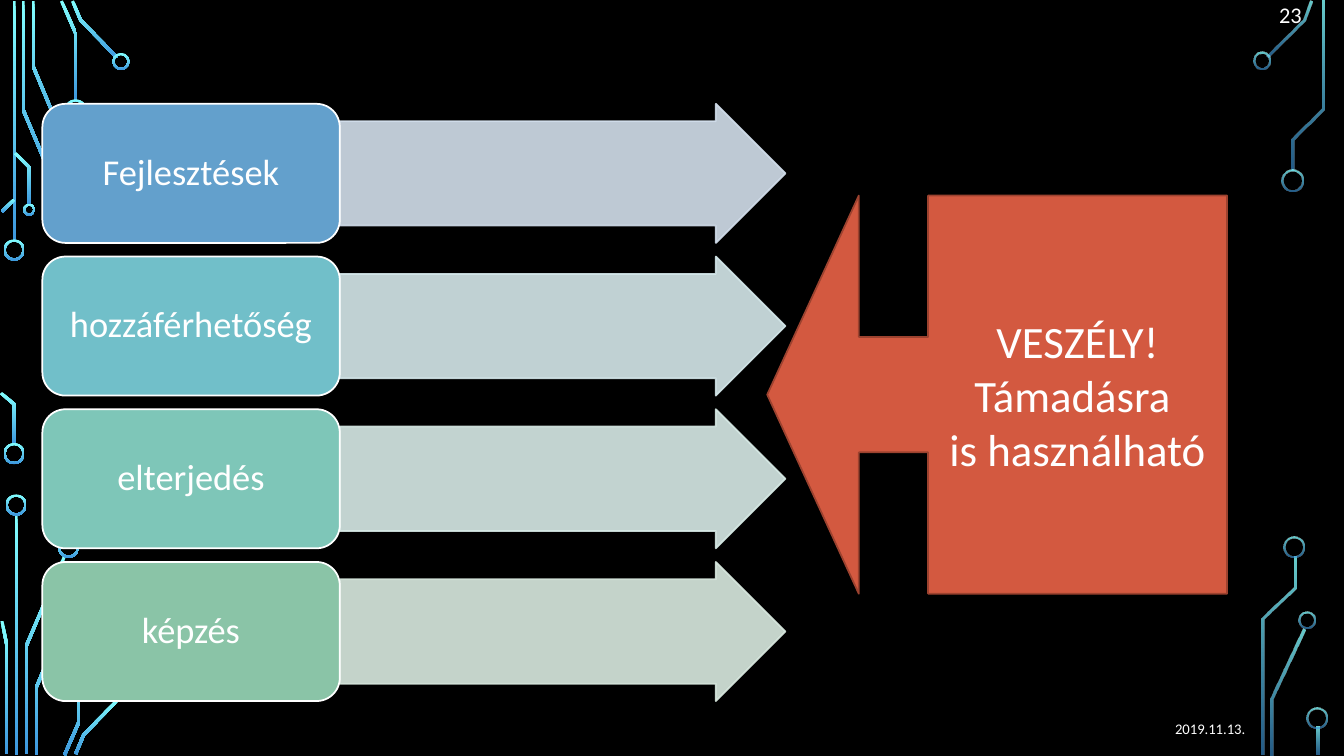
from dataclasses import dataclass
from math import hypot

from lxml.etree import SubElement
from pptx import Presentation
from pptx.dml.color import RGBColor
from pptx.enum.shapes import MSO_SHAPE
from pptx.enum.text import MSO_ANCHOR, PP_ALIGN
from pptx.oxml.ns import qn
from pptx.util import Inches, Pt

Point = tuple[float, float]


@dataclass(frozen=True)
class Theme:
    font: str = "Calibri"
    back: str = "000000"
    white: str = "FFFFFF"
    glow: str = "82FFFF"
    deep: str = "3D97DE"
    alarm: str = "D35940"
    rim: str = "9C422F"
    date: float = 10.5
    number: float = 16
    label: float = 26
    warning: float = 32
    edge: float = 1.25


@dataclass(frozen=True)
class Box:
    left: float
    top: float
    width: float
    height: float

    def emu(self) -> list[int]:
        return [Inches(v) for v in (self.left, self.top, self.width, self.height)]


@dataclass(frozen=True)
class Factor:
    text: str
    fill: str
    arrow: str


@dataclass(frozen=True)
class Ring:
    x: float
    y: float
    size: float = 0.21


@dataclass(frozen=True)
class Circuit:
    traces: list[list[Point]]
    rings: list[Ring]
    alphas: tuple[int, int]


THEME = Theme()
TRACE = 0.03
FACTORS = [
    Factor("Fejlesztések", "63A0CC", "D3DFEC"),
    Factor("hozzáférhetőség", "71BFC9", "D5E8EB"),
    Factor("elterjedés", "7EC6B8", "D8EBE7"),
    Factor("képzés", "8AC4A7", "DAEAE1"),
]
CIRCUITS = [
    Circuit(
        [
            [(0.14, 0.01), (0.14, 2.4)],
            [(0.23, 0.01), (0.23, 1.09), (0.61, 1.99)],
            [(0.33, 0.01), (0.33, 0.66), (0.71, 1.57)],
            [(0.61, 0.01), (0.75, 0.33), (0.75, 1)],
            [(0.72, 0.01), (0.8, 0.2), (1.16, 0.57)],
            [(0.02, 2.1), (0.14, 1.98)],
            [(0.01, 3.9), (0.14, 4.01), (0.14, 4.41)],
            [(0.15, 1.52), (0.29, 1.66), (0.29, 2.03)],
            [(0.16, 5.1), (0.16, 7.49)],
            [(0.26, 7.48), (0.26, 6.41), (0.64, 5.52)],
            [(0.07, 7.48), (0.07, 6.41), (0.02, 6.16)],
            [(0.36, 7.49), (0.36, 6.82), (0.73, 5.94)],
            [(0.64, 7.49), (0.78, 7.17), (0.78, 6.5)],
            [(0.75, 7.48), (0.83, 7.29), (1.18, 6.93)],
        ],
        [
            Ring(0.14, 2.48), Ring(0.14, 4.5), Ring(0.75, 1.09),
            Ring(1.2, 0.61, 0.17), Ring(0.29, 2.08, 0.12), Ring(0.16, 5.01),
            Ring(0.68, 5.43), Ring(1.23, 6.88, 0.17),
        ],
        (100, 100),
    ),
    Circuit(
        [
            [(12.57, 0.56), (12.93, 0.2), (13, 0.01)],
            [(12.62, 7.49), (12.62, 6.93), (12.93, 6.24)],
            [(12.82, 1.69), (12.82, 1.38), (13.12, 1.08), (13.12, 0.01)],
            [(12.53, 7.49), (12.53, 6.14), (12.84, 5.83), (12.84, 5.52)],
            [(13.07, 7.21), (13.07, 7.49)],
        ],
        [
            Ring(12.52, 0.6, 0.17), Ring(12.82, 1.79), Ring(12.96, 6.15, 0.17),
            Ring(12.83, 5.43), Ring(13.06, 7.12),
        ],
        (80, 60),
    ),
]


def fade(shape, *alphas: int) -> None:
    """Set the opacity, in percent, of the shape's colours in order."""
    for color, alpha in zip(shape._element.spPr.iter(qn("a:srgbClr")), alphas):
        if alpha < 100:
            SubElement(color, qn("a:alpha"), val=str(alpha * 1000))


def write(shape, text: str, *, size: float, align=PP_ALIGN.CENTER,
          color: str = THEME.white, spacing: float = 1.0) -> None:
    frame = shape.text_frame
    frame.word_wrap = True
    frame.vertical_anchor = MSO_ANCHOR.MIDDLE
    for i, line in enumerate(text.split("\n")):
        para = frame.add_paragraph() if i else frame.paragraphs[0]
        para.text = line
        para.alignment = align
        para.line_spacing = spacing
        para.font.name = THEME.font
        para.font.size = Pt(size)
        para.font.color.rgb = RGBColor.from_string(color)


def block(shapes, kind, box: Box, fill: str, line: str, adjust=()):
    shape = shapes.add_shape(kind, *box.emu())
    shape.shadow.inherit = False
    shape.fill.solid()
    shape.fill.fore_color.rgb = RGBColor.from_string(fill)
    shape.line.color.rgb = RGBColor.from_string(line)
    shape.line.width = Pt(THEME.edge)
    for i, value in enumerate(adjust):
        shape.adjustments[i] = value
    return shape


def glow(shape, alphas: tuple[int, int]) -> None:
    shape.shadow.inherit = False
    shape.line.fill.background()
    shape.fill.gradient()
    shape.fill.gradient_angle = 270
    for i, (stop, color) in enumerate(zip(shape.fill.gradient_stops, (THEME.glow, THEME.deep))):
        stop.position = i
        stop.color.rgb = RGBColor.from_string(color)
    fade(shape, *alphas)


def outline(path: list[Point]) -> list[Point]:
    """Return the corners of a mitred band that follows the path."""
    norms = []
    for (x, y), (u, v) in zip(path, path[1:]):
        span = hypot(u - x, v - y)
        norms.append(((y - v) / span, (u - x) / span))
    near, far = [], []
    for (x, y), (a, b), (c, d) in zip(path, norms[:1] + norms, norms + norms[-1:]):
        scale = TRACE / 2 / (1 + a * c + b * d)
        dx, dy = (a + c) * scale, (b + d) * scale
        near.append((x + dx, y + dy))
        far.append((x - dx, y - dy))
    return near + far[::-1]


def draw_circuit(shapes, circuit: Circuit) -> None:
    for trace in circuit.traces:
        first, *rest = [(Inches(x), Inches(y)) for x, y in outline(trace)]
        pen = shapes.build_freeform(*first)
        pen.add_line_segments(rest, close=True)
        glow(pen.convert_to_shape(), circuit.alphas)
    for ring in circuit.rings:
        box = Box(ring.x - ring.size / 2, ring.y - ring.size / 2, ring.size, ring.size)
        shape = shapes.add_shape(MSO_SHAPE.DONUT, *box.emu())
        shape.adjustments[0] = 0.02 / ring.size
        glow(shape, circuit.alphas)


def draw_factor(shapes, factor: Factor, top: float) -> None:
    arrow = block(shapes, MSO_SHAPE.RIGHT_ARROW, Box(3.37, top, 4.42, 1.38),
                  factor.arrow, factor.arrow, (0.75, 0.5))
    fade(arrow, 90, 90)
    card = block(shapes, MSO_SHAPE.ROUNDED_RECTANGLE, Box(0.42, top, 2.95, 1.38),
                 factor.fill, THEME.white)
    write(card, factor.text, size=THEME.label, spacing=0.9)


def main() -> None:
    deck = Presentation()
    deck.slide_width, deck.slide_height = Inches(13.33), Inches(7.5)
    slide = deck.slides.add_slide(deck.slide_layouts[6])
    slide.background.fill.solid()
    slide.background.fill.fore_color.rgb = RGBColor.from_string(THEME.back)
    shapes = slide.shapes
    for circuit in CIRCUITS:
        draw_circuit(shapes, circuit)
    date = shapes.add_textbox(*Box(11.4, 7.03, 1.05, 0.4).emu())
    write(date, "2019.11.13.", size=THEME.date, align=PP_ALIGN.RIGHT)
    number = shapes.add_textbox(*Box(12.17, -0.06, 0.84, 0.4).emu())
    write(number, "23", size=THEME.number, align=PP_ALIGN.RIGHT)
    for i, factor in enumerate(FACTORS):
        draw_factor(shapes, factor, 1.03 + i * 1.515)
    danger = block(shapes, MSO_SHAPE.LEFT_ARROW_CALLOUT, Box(7.61, 1.94, 4.56, 3.95),
                   THEME.alarm, THEME.rim, (0.29, 0.5, 0.23, 0.65))
    write(danger, "VESZÉLY!\nTámadásra \vis használható", size=THEME.warning)
    deck.save("out.pptx")


if __name__ == "__main__":
    main()
